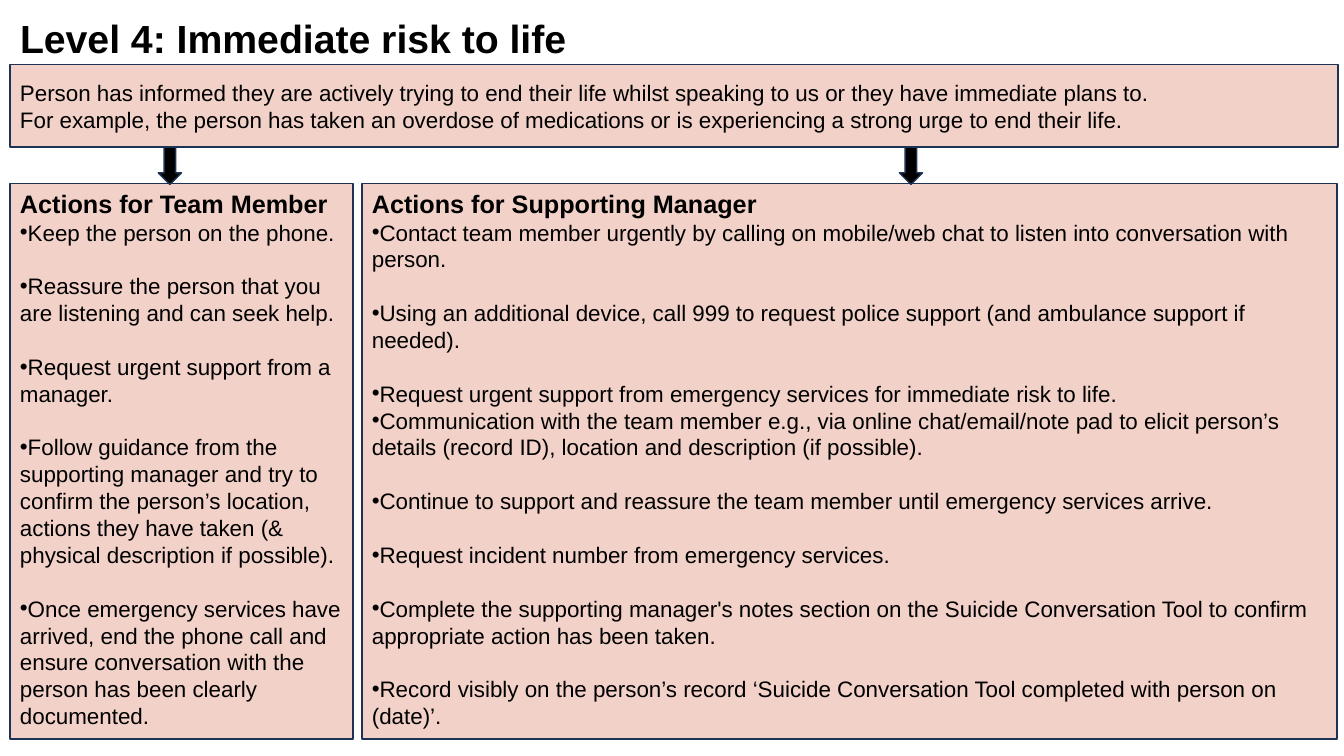
from pptx import Presentation
from pptx.dml.color import RGBColor
from pptx.enum.shapes import MSO_SHAPE
from pptx.enum.text import MSO_ANCHOR, PP_ALIGN
from pptx.oxml.ns import qn
from pptx.util import Emu, Pt
from lxml import etree

RECTANGLE = MSO_SHAPE.RECTANGLE
DOWN_ARROW = MSO_SHAPE.DOWN_ARROW
TOP = MSO_ANCHOR.TOP
MIDDLE = MSO_ANCHOR.MIDDLE
LEFT = PP_ALIGN.LEFT

SCALE = 9144
BLACK, PINK, NAVY = "000000", "F2D1C8", "1E3256"
ITEM_GAP = 19.2

SITUATION = [
    "Person has informed they are actively trying to end their life whilst speaking to us or they have immediate plans to.",
    "For example, the person has taken an overdose of medications or is experiencing a strong urge to end their life.",
]

# Each action is its text and whether a gap stands above it.
TEAM_MEMBER_ACTIONS = [
    ("Keep the person on the phone.", False),
    ("Reassure the person that you are listening and can seek help.", True),
    ("Request urgent support from a manager.", True),
    ("Follow guidance from the supporting manager and try to confirm the person’s location, "
     "actions they have taken (& physical description if possible).", True),
    ("Once emergency services have arrived, end the phone call and ensure conversation "
     "with the person has been clearly documented.", True),
]
MANAGER_ACTIONS = [
    ("Contact team member urgently by calling on mobile/web chat to listen into "
     "conversation with person.", False),
    ("Using an additional device, call 999 to request police support "
     "(and ambulance support if needed).", True),
    ("Request urgent support from emergency services for immediate risk to life.", True),
    ("Communication with the team member e.g., via online chat/email/note pad to elicit "
     "person’s details (record ID), location and description (if possible).", False),
    ("Continue to support and reassure the team member until emergency services arrive.", True),
    ("Request incident number from emergency services.", True),
    ("Complete the supporting manager's notes section on the Suicide Conversation Tool "
     "to confirm appropriate action has been taken.", True),
    ("Record visibly on the person’s record ‘Suicide Conversation Tool completed with "
     "person on (date)’.", True),
]


def color(value):
    return RGBColor.from_string(value)


class SlideBuilder:
    """Holds the style and the current slide, and adds each kind of element."""

    def __init__(self, slide, font="Arial"):
        self.slide = slide
        self.font = font

    def run(self, paragraph, text, size, bold=False):
        run = paragraph.add_run()
        run.text = text
        run.font.name = self.font
        run.font.size = Pt(size)
        run.font.bold = bold
        run.font.color.rgb = color(BLACK)

    def shape(self, kind, box, fill):
        shape = self.slide.shapes.add_shape(kind, *[Emu(px * SCALE) for px in box])
        shape.shadow.inherit = False
        shape.fill.solid()
        shape.fill.fore_color.rgb = color(fill)
        shape.line.color.rgb = color(NAVY)
        shape.line.width = Pt(1)
        return shape

    def title(self, box, text):
        frame = self.slide.shapes.add_textbox(*[Emu(px * SCALE) for px in box]).text_frame
        frame.word_wrap = True
        self.run(frame.paragraphs[0], text, 28, bold=True)

    def panel(self, box, anchor):
        frame = self.shape(RECTANGLE, box, PINK).text_frame
        frame.word_wrap = True
        frame.vertical_anchor = anchor
        frame.paragraphs[0].alignment = LEFT
        return frame

    def banner(self, box, lines):
        paragraph = self.panel(box, MIDDLE).paragraphs[0]
        for index, line in enumerate(lines):
            if index:
                paragraph.add_line_break()
            self.run(paragraph, line, 16)

    def action_list(self, box, heading, actions):
        frame = self.panel(box, TOP)
        self.run(frame.paragraphs[0], heading, 18, bold=True)
        for text, has_gap in actions:
            paragraph = frame.add_paragraph()
            paragraph.alignment = LEFT
            paragraph.space_before = Pt(ITEM_GAP if has_gap else 0)
            self.run(paragraph, text, 16)
            properties = paragraph._p.get_or_add_pPr()
            etree.SubElement(properties, qn("a:buFont")).set("typeface", self.font)
            etree.SubElement(properties, qn("a:buChar")).set("char", "•")

    def arrow(self, left):
        self.shape(DOWN_ARROW, (left, 146, 23, 37), BLACK)


def main():
    presentation = Presentation()
    presentation.slide_width = Emu(1333 * SCALE)
    presentation.slide_height = Emu(750 * SCALE)
    builder = SlideBuilder(presentation.slides.add_slide(presentation.slide_layouts[6]))

    builder.action_list((10, 182, 340, 551), "Actions for Team Member", TEAM_MEMBER_ACTIONS)
    builder.banner((10, 64, 1317, 82), SITUATION)
    builder.action_list((359, 182, 967, 551), "Actions for Supporting Manager", MANAGER_ACTIONS)
    for left in (157, 892):
        builder.arrow(left)
    builder.title((10, 9, 1298, 57), "Level 4: Immediate risk to life")

    presentation.save("out.pptx")


if __name__ == "__main__":
    main()
